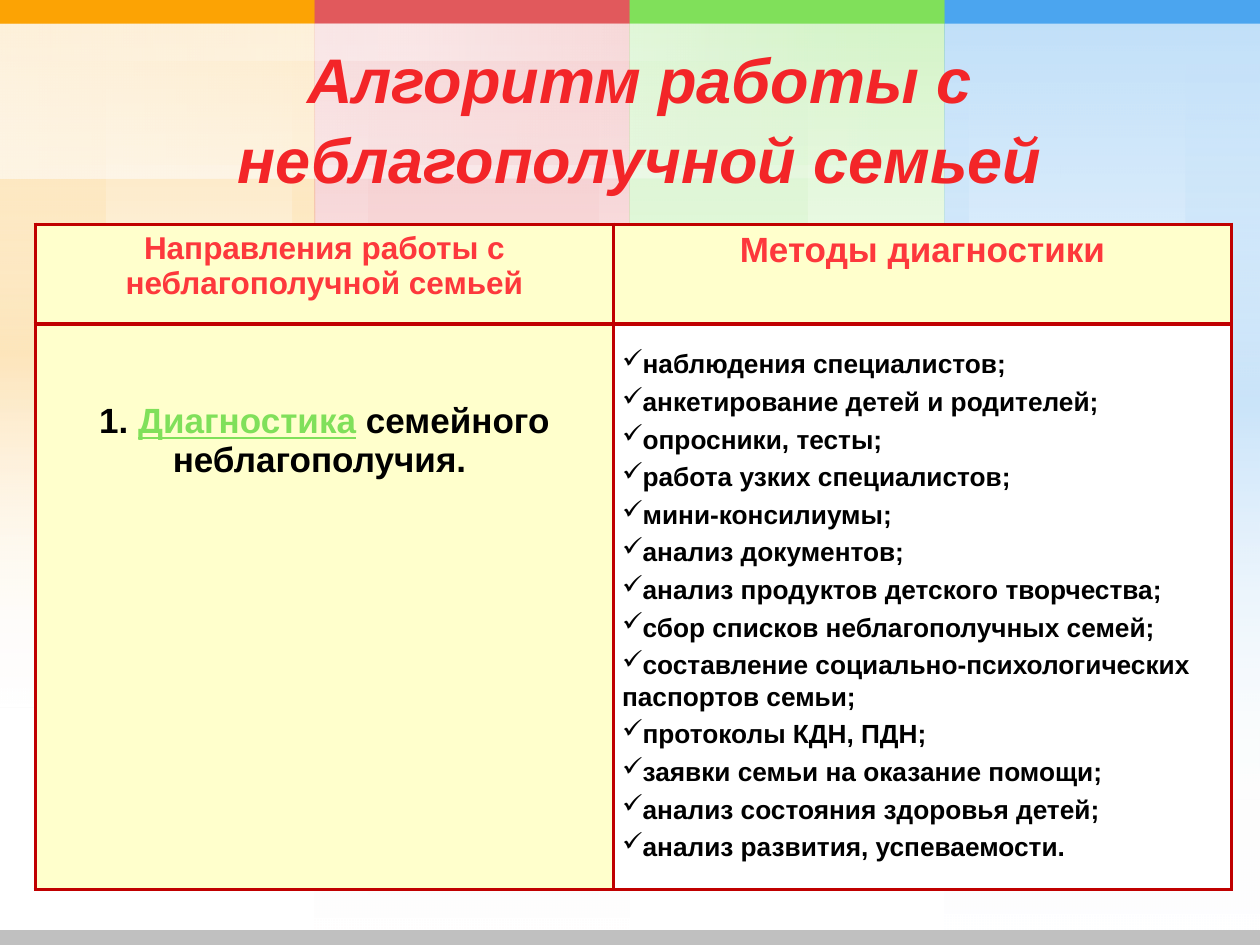
from dataclasses import dataclass

from lxml import etree
from pptx import Presentation
from pptx import util as u
from pptx.dml.color import RGBColor
from pptx.enum import shapes, text
from pptx.oxml import parse_xml
from pptx.oxml.ns import nsdecls, qn


@dataclass(frozen=True)
class Theme:
    """Colours, font and type sizes of the slide."""
    font: str = "Arial"
    orange: str = "FCA304"
    red: str = "E1595C"
    green: str = "80E05A"
    blue: str = "4BA5EF"
    white: str = "FFFFFF"
    black: str = "000000"
    footer: str = "C0C0C0"
    cream: str = "FFFFCC"
    border: str = "C00000"
    title: str = "F32528"
    heading: str = "FD383C"
    title_size: int = 36
    large_size: int = 20
    heading_size: int = 18
    list_size: int = 15


class SlideBuilder:
    """Draws styled elements on the current slide."""

    def __init__(self, presentation, theme):
        self.theme = theme
        self.slide = presentation.slides.add_slide(presentation.slide_layouts[5])

    def style(self, paragraph, size, color, italic=False):
        font = paragraph.font
        font.name, font.size = self.theme.font, u.Pt(size)
        font.bold, font.italic = True, italic
        font.color.rgb = RGBColor.from_string(color)

    def rectangle(self, left, top, width, height, color):
        shape = self.slide.shapes.add_shape(
            shapes.MSO_SHAPE.RECTANGLE, *map(u.Cm, (left, top, width, height)))
        shape.shadow.inherit = False
        shape.line.fill.background()
        shape.fill.solid()
        shape.fill.fore_color.rgb = RGBColor.from_string(color)
        return shape

    def gradient(self, box, color, opacity, glow=False, rotation=0):
        shape = self.rectangle(*box, color)
        shape.rotation = rotation
        white = self.theme.white
        stops = [(0, color, opacity), (100, white, 0)]
        if glow:
            stops = [(0, white, 0), (50, color, opacity), (100, white, 0)]
        stop_xml = "".join(
            f'<a:gs pos="{position * 1000}"><a:srgbClr val="{tint}">'
            f'<a:alpha val="{alpha * 1000}"/></a:srgbClr></a:gs>'
            for position, tint, alpha in stops)
        fill = parse_xml(
            f'<a:gradFill {nsdecls("a")} rotWithShape="1"><a:gsLst>{stop_xml}</a:gsLst>'
            '<a:lin ang="5400000" scaled="0"/></a:gradFill>')
        properties = shape._element.spPr
        properties.replace(properties.find(qn("a:solidFill")), fill)

    def title(self, wording, left, top, width, height):
        shape = self.slide.shapes.title
        shape.left, shape.top, shape.width, shape.height = map(
            u.Cm, (left, top, width, height))
        frame = shape.text_frame
        frame.text = wording
        frame.word_wrap = True
        frame.vertical_anchor = text.MSO_ANCHOR.MIDDLE
        paragraph = frame.paragraphs[0]
        paragraph.alignment = text.PP_ALIGN.CENTER
        paragraph.line_spacing = 1.05
        self.style(paragraph, self.theme.title_size, self.theme.title, italic=True)
        self.slide.shapes._spTree.append(shape._element)

    def table(self, left, top, columns, rows):
        table = self.slide.shapes.add_table(
            len(rows), len(columns), u.Cm(left), u.Cm(top),
            u.Cm(sum(columns)), u.Cm(sum(rows))).table
        table.first_row = table.horz_banding = False
        for column, width in zip(table.columns, columns):
            column.width = u.Cm(width)
        for row, height in zip(table.rows, rows):
            row.height = u.Cm(height)
        return table

    def cell(self, cell, fill, runs=(), size=18, color="000000", margin_top=0.13):
        cell.fill.solid()
        cell.fill.fore_color.rgb = RGBColor.from_string(fill)
        cell.margin_top = u.Cm(margin_top)
        paragraph = cell.text_frame.paragraphs[0]
        paragraph.alignment = text.PP_ALIGN.CENTER
        self.style(paragraph, size, color)
        for wording, accent in runs:
            run = paragraph.add_run()
            run.text = wording
            if accent:
                run.font.underline = True
                run.font.color.rgb = RGBColor.from_string(accent)
        for index, side in enumerate(("lnL", "lnR", "lnT", "lnB")):
            cell._tc.get_or_add_tcPr().insert(index, parse_xml(
                f'<a:{side} {nsdecls("a")} w="{u.Pt(2.25)}"><a:solidFill>'
                f'<a:srgbClr val="{self.theme.border}"/></a:solidFill></a:{side}>'))

    def checklist(self, items, left, top, width, height):
        frame = self.slide.shapes.add_textbox(
            *map(u.Cm, (left, top, width, height))).text_frame
        frame.word_wrap = True
        frame.vertical_anchor = text.MSO_ANCHOR.BOTTOM
        for index, item in enumerate(items):
            paragraph = frame.add_paragraph() if index else frame.paragraphs[0]
            paragraph.text = item
            paragraph.space_before = u.Pt(3.5)
            self.style(paragraph, self.theme.list_size, self.theme.black)
            properties = paragraph._p.get_or_add_pPr()
            properties.set("marL", "0")
            properties.set("indent", "0")
            bullet = etree.Element(qn("a:buChar"), char="✓")
            properties.insert(properties.index(properties.find(qn("a:defRPr"))), bullet)


def draw_background(builder, theme):
    """Draw the four colour bands, the white wash and the footer strip."""
    band = 6.35
    bands = [
        (theme.orange, 14.27, 14.27, [(5.89, 0.46), (0, 2.13)]),
        (theme.red, 19.05, 19.05, [(1.07, 4.65)]),
        (theme.green, 14.27, 14.27, [(0, 3.58)]),
        (theme.blue, 18.97, 16.18, [(0, 0.48), (4.85, 1.5)]),
    ]
    for index, (color, height, glow_height, glows) in enumerate(bands):
        left = index * band
        fade = (left, 0, band, height)
        builder.gradient(fade, color, 20)
        for offset, width in glows:
            builder.gradient((left + offset, 0, width, glow_height), color, 20, glow=True)
        builder.gradient(fade, color, 20)
        builder.rectangle(left, 0, band, 0.48, color)
    wash = (8, -7.49, 3.1, 19.08)
    for box, glow in [((10.57, -7.24, 0.25, 21.39), True), (wash, False),
                      ((7.77, -7.29, 0.74, 16.28), True), (wash, False)]:
        builder.gradient(box, theme.white, 35, glow, rotation=270)
    builder.rectangle(0, 18.75, 25.4, 0.3, theme.footer)


def main():
    """Build the slide and save it."""
    presentation = Presentation()
    presentation.slide_width, presentation.slide_height = u.Cm(25.4), u.Cm(19.05)
    theme = Theme()
    builder = SlideBuilder(presentation, theme)
    draw_background(builder, theme)
    builder.title("Алгоритм работы с неблагополучной семьей", 1.27, 0.76, 23.24, 3.18)
    table = builder.table(0.71, 4.52, (11.66, 12.45), (2.01, 11.4))
    builder.cell(table.cell(0, 0), theme.cream,
                 [("Направления работы с неблагополучной семьей", None)],
                 theme.heading_size, theme.heading)
    builder.cell(table.cell(0, 1), theme.cream, [("Методы диагностики", None)],
                 theme.large_size, theme.heading)
    builder.cell(table.cell(1, 0), theme.cream,
                 [("1. ", None), ("Диагностика", theme.green),
                  (" семейного неблагополучия. ", None)],
                 theme.large_size, theme.black, margin_top=1.58)
    builder.cell(table.cell(1, 1), theme.white)
    builder.checklist([
        "наблюдения специалистов;",
        "анкетирование детей и родителей;",
        "опросники, тесты;",
        "работа узких специалистов;",
        "мини-консилиумы;",
        "анализ документов;",
        "анализ продуктов детского творчества;",
        "сбор списков неблагополучных семей;",
        "составление социально-психологических паспортов семьи;",
        "протоколы КДН, ПДН;",
        "заявки семьи на оказание помощи;",
        "анализ состояния здоровья детей;",
        "анализ развития, успеваемости.",
    ], 12.29, 6.73, 12.37, 10.77)
    presentation.save("out.pptx")


if __name__ == "__main__":
    main()
